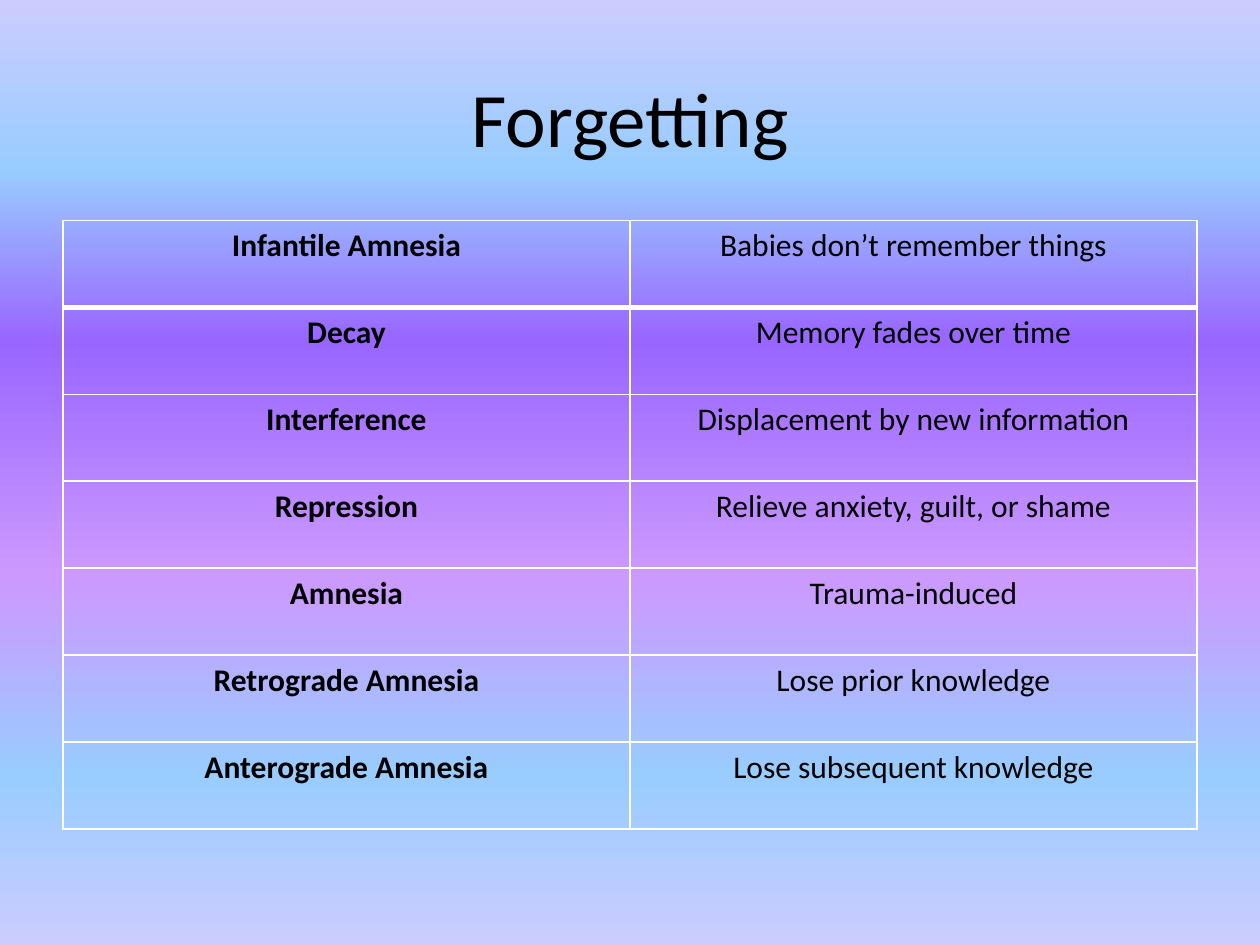
from lxml import etree
from pptx import Presentation
from pptx.dml.color import RGBColor
from pptx.enum.text import MSO_ANCHOR, PP_ALIGN
from pptx.oxml.ns import qn
from pptx.util import Emu, Pt

CENTER = PP_ALIGN.CENTER
MIDDLE = MSO_ANCHOR.MIDDLE

BLACK = RGBColor(0x00, 0x00, 0x00)
WHITE = RGBColor(0xFF, 0xFF, 0xFF)
LAVENDER = RGBColor(0xCC, 0xCC, 0xFF)
SKY = RGBColor(0x99, 0xCC, 0xFF)
VIOLET = RGBColor(0x99, 0x66, 0xFF)
ORCHID = RGBColor(0xCC, 0x99, 0xFF)

BACKGROUND_STOPS = [(0, LAVENDER), (18, SKY), (36, VIOLET),
                    (61, ORCHID), (82, SKY), (100, LAVENDER)]

FORGETTING_TYPES = [
    ("Infantile Amnesia", "Babies don’t remember things"),
    ("Decay", "Memory fades over time"),
    ("Interference", "Displacement by new information"),
    ("Repression", "Relieve anxiety, guilt, or shame"),
    ("Amnesia", "Trauma-induced"),
    ("Retrograde Amnesia", "Lose prior knowledge"),
    ("Anterograde Amnesia", "Lose subsequent knowledge"),
]


def px(length):
    """Turn px, at 100 to the inch, into EMU."""
    return Emu(length * 9144)


class SlideBuilder:
    font = "Calibri"
    title_size = 44
    cell_size = 18
    thin, thick = 1, 3

    def __init__(self, page):
        self.page = page

    def background(self, stops):
        fill = self.page.background.fill
        fill.gradient()
        fill.gradient_angle = 270
        stop_list = next(self.page.element.iter(qn("a:gsLst")))
        for old_stop in list(stop_list):
            stop_list.remove(old_stop)
        for percent, color in stops:
            stop = etree.SubElement(stop_list, qn("a:gs"), pos=str(percent * 1000))
            etree.SubElement(stop, qn("a:srgbClr"), val=str(color))

    def add_text(self, frame, text, size, bold=False):
        para = frame.paragraphs[0]
        para.alignment = CENTER
        span = para.add_run()
        span.text = text
        span.font.name = self.font
        span.font.size = Pt(size)
        span.font.bold = bold
        span.font.color.rgb = BLACK

    def title(self, text, left, top, width, height):
        box = self.page.shapes.title
        box.left, box.top, box.width, box.height = map(px, (left, top, width, height))
        box.text_frame.vertical_anchor = MIDDLE
        self.add_text(box.text_frame, text, self.title_size)

    def borders(self, cell, top, bottom):
        """Draw white cell edges; the lines must come before the cell's fill."""
        edges = {"lnL": self.thin, "lnR": self.thin, "lnT": top, "lnB": bottom}
        properties = cell._tc.get_or_add_tcPr()
        for position, (edge, weight) in enumerate(edges.items()):
            line = etree.Element(qn(f"a:{edge}"), w=str(Pt(weight)))
            solid = etree.SubElement(line, qn("a:solidFill"))
            etree.SubElement(solid, qn("a:srgbClr"), val=str(WHITE))
            properties.insert(position, line)

    def table(self, rows, left, top, width, row_height):
        """Add a clear table with bold first column and a thick rule under row one."""
        frame = self.page.shapes.add_table(
            len(rows), len(rows[0]), px(left), px(top), px(width), px(row_height * len(rows)))
        grid = frame.table
        grid.horz_banding = False
        grid.first_row = False
        for row_index, texts in enumerate(rows):
            grid.rows[row_index].height = px(row_height)
            for column_index, text in enumerate(texts):
                cell = grid.cell(row_index, column_index)
                cell.fill.background()
                self.borders(cell,
                             top=self.thick if row_index == 1 else self.thin,
                             bottom=self.thick if row_index == 0 else self.thin)
                self.add_text(cell.text_frame, text, self.cell_size, bold=column_index == 0)


def main():
    deck = Presentation()
    deck.slide_width, deck.slide_height = px(1000), px(750)
    title_only = deck.slide_layouts[5]
    builder = SlideBuilder(deck.slides.add_slide(title_only))
    builder.background(BACKGROUND_STOPS)
    builder.title("Forgetting", 50, 30, 900, 125)
    builder.table(FORGETTING_TYPES, 50, 175, 900, 69)
    deck.save("out.pptx")


if __name__ == "__main__":
    main()
